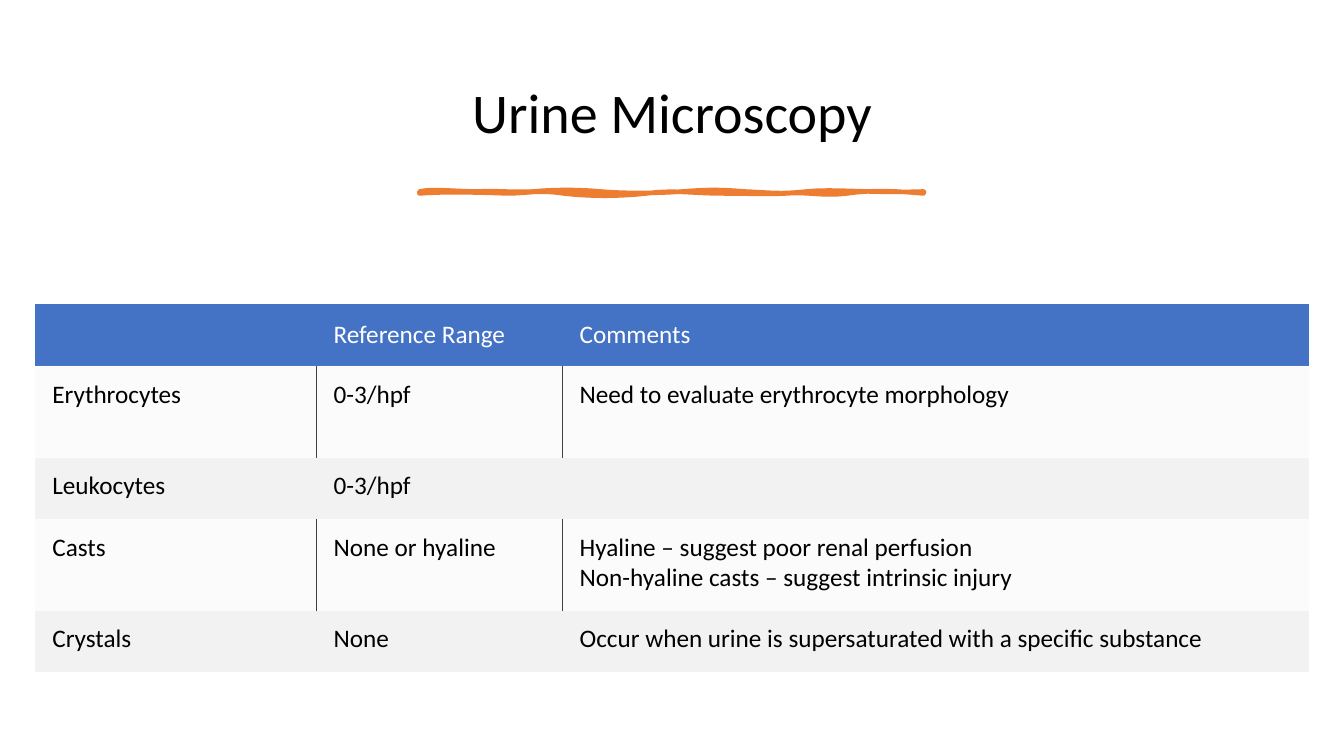
import pptx
import pptx.dml.color
import pptx.enum.text
import pptx.oxml
import pptx.oxml.ns
import pptx.util

PX = 9144  # EMU in one px, 100 px to the inch
FONT = "Calibri"
HUE = {"text": "000000", "head": "4472C4", "white": "FFFFFF",
       "band": "F2F2F2", "rule": "404040", "wave": "ED7D31"}

COLS = [279, 244, 740]
ROWS = [61, 91, 61, 91, 61]
DATA = [
    ["", "Reference Range", "Comments"],
    ["Erythrocytes", "0-3/hpf", "Need to evaluate erythrocyte morphology"],
    ["Leukocytes", "0-3/hpf", ""],
    ["Casts", "None or hyaline",
     "Hyaline – suggest poor renal perfusion\n"
     "Non-hyaline casts – suggest intrinsic injury"],
    ["Crystals", "None",
     "Occur when urine is supersaturated with a specific substance"],
]
NO_GRID = "{2D5ABB26-0587-4C30-8999-92F81FD0307C}"

# Bezier segments of the brush stroke, from its top left corner:
# two control points and an end point each
WAVE = [
    (12, -3, 38, 0, 57, 0), (76, -1, 93, 1, 113, 0),
    (133, -2, 158, -2, 180, 0), (201, 2, 237, 2, 261, 0),
    (286, -2, 298, -2, 323, 0), (347, 1, 358, 3, 384, 0),
    (410, -3, 451, 2, 500, 0), (501, 1, 500, 1, 500, 2),
    (479, 0, 449, -2, 424, 2), (399, 5, 385, 0, 363, 2),
    (340, 3, 331, 2, 301, 2), (271, 2, 251, -2, 225, 2),
    (198, 5, 169, 5, 143, 2), (118, -2, 107, 2, 87, 2),
    (67, 1, 22, 0, 0, 2),
]


def color(name):
    return pptx.dml.color.RGBColor.from_string(HUE[name])


def style(para, size, name):
    para.font.name = FONT
    para.font.size = pptx.util.Pt(size)
    para.font.bold = False
    para.font.color.rgb = color(name)


def title(slide, left, top, width, height):
    box = slide.shapes.add_textbox(*[n * PX for n in (left, top, width, height)])
    frame = box.text_frame
    frame.word_wrap = True
    frame.vertical_anchor = pptx.enum.text.MSO_ANCHOR.MIDDLE
    para = frame.paragraphs[0]
    para.text = "Urine Microscopy"
    para.alignment = pptx.enum.text.PP_ALIGN.CENTER
    para.line_spacing = 0.9
    style(para, 40, "text")


def trace(curves, steps=8):
    """Points along a chain of cubic curves that starts at 0, 0."""
    x, y = 0, 0
    points = []
    for ax, ay, bx, by, ex, ey in curves:
        for i in range(1, steps + 1):
            t = i / steps
            u = 1 - t
            mix = (u ** 3, 3 * u * u * t, 3 * u * t * t, t ** 3)
            points.append(tuple(sum(m * v for m, v in zip(mix, vals))
                                for vals in ((x, ax, bx, ex), (y, ay, by, ey))))
        x, y = ex, ey
    return points


def stroke(slide, left, top):
    pen = slide.shapes.build_freeform(left * PX, top * PX)
    pen.add_line_segments([((left + x) * PX, (top + y) * PX)
                           for x, y in trace(WAVE)], close=True)
    wave = pen.convert_to_shape()
    wave.shadow.inherit = False
    wave.fill.solid()
    wave.fill.fore_color.rgb = color("wave")
    wave.line.color.rgb = color("wave")
    wave.line.width = pptx.util.Pt(3.25)


def fade(props, share):
    tone = props.find(".//" + pptx.oxml.ns.qn("a:srgbClr"))
    tone.append(pptx.oxml.parse_xml(
        f'<a:alpha {pptx.oxml.ns.nsdecls("a")} val="{share * 1000}"/>'))


def border(props, sides):
    for i, side in enumerate(sides):
        props.insert(i, pptx.oxml.parse_xml(
            f'<a:ln{side} {pptx.oxml.ns.nsdecls("a")} w="6350"><a:solidFill>'
            f'<a:srgbClr val="{HUE["rule"]}"/></a:solidFill></a:ln{side}>'))


def table(slide, left, top, width, height):
    frame = slide.shapes.add_table(len(ROWS), len(COLS), *[
        n * PX for n in (left, top, width, height)])
    grid = frame.table
    grid.first_row = grid.horz_banding = False
    frame._element.find(".//" + pptx.oxml.ns.qn("a:tableStyleId")).text = NO_GRID
    for col, size in zip(grid.columns, COLS):
        col.width = size * PX
    for row, size in zip(grid.rows, ROWS):
        row.height = size * PX

    for r, line in enumerate(DATA):
        for c, text in enumerate(line):
            cell = grid.cell(r, c)
            cell.text = text
            cell.margin_left = 17 * PX
            cell.margin_right = cell.margin_top = cell.margin_bottom = 13 * PX
            for para in cell.text_frame.paragraphs:
                style(para, 18, "text" if r else "white")
            cell.fill.solid()
            cell.fill.fore_color.rgb = color("band" if r else "head")
            if r == 0:
                cell.vertical_anchor = pptx.enum.text.MSO_ANCHOR.MIDDLE
            # Odd rows are pale, with rules between the columns
            if r % 2:
                props = cell._tc.tcPr
                fade(props, 30)
                border(props, ["R", "LR", "L"][c])


def main():
    deck = pptx.Presentation()
    deck.slide_width, deck.slide_height = 1333 * PX, 750 * PX
    slide = deck.slides.add_slide(deck.slide_layouts[6])
    title(slide, 70, 46, 1193, 137)
    stroke(slide, 416, 190)
    table(slide, 35, 302, sum(COLS), sum(ROWS))
    deck.save("out.pptx")


if __name__ == "__main__":
    main()
